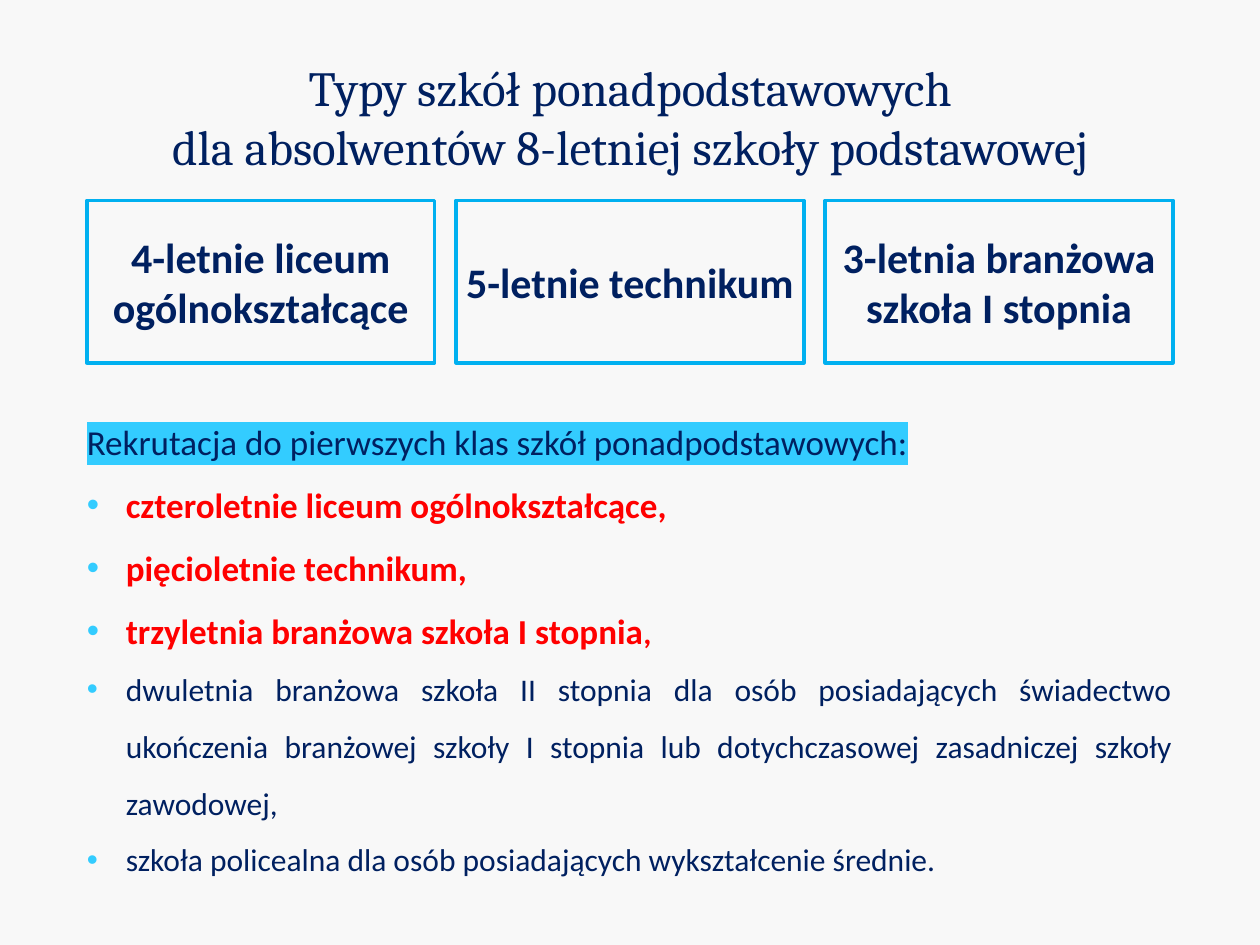
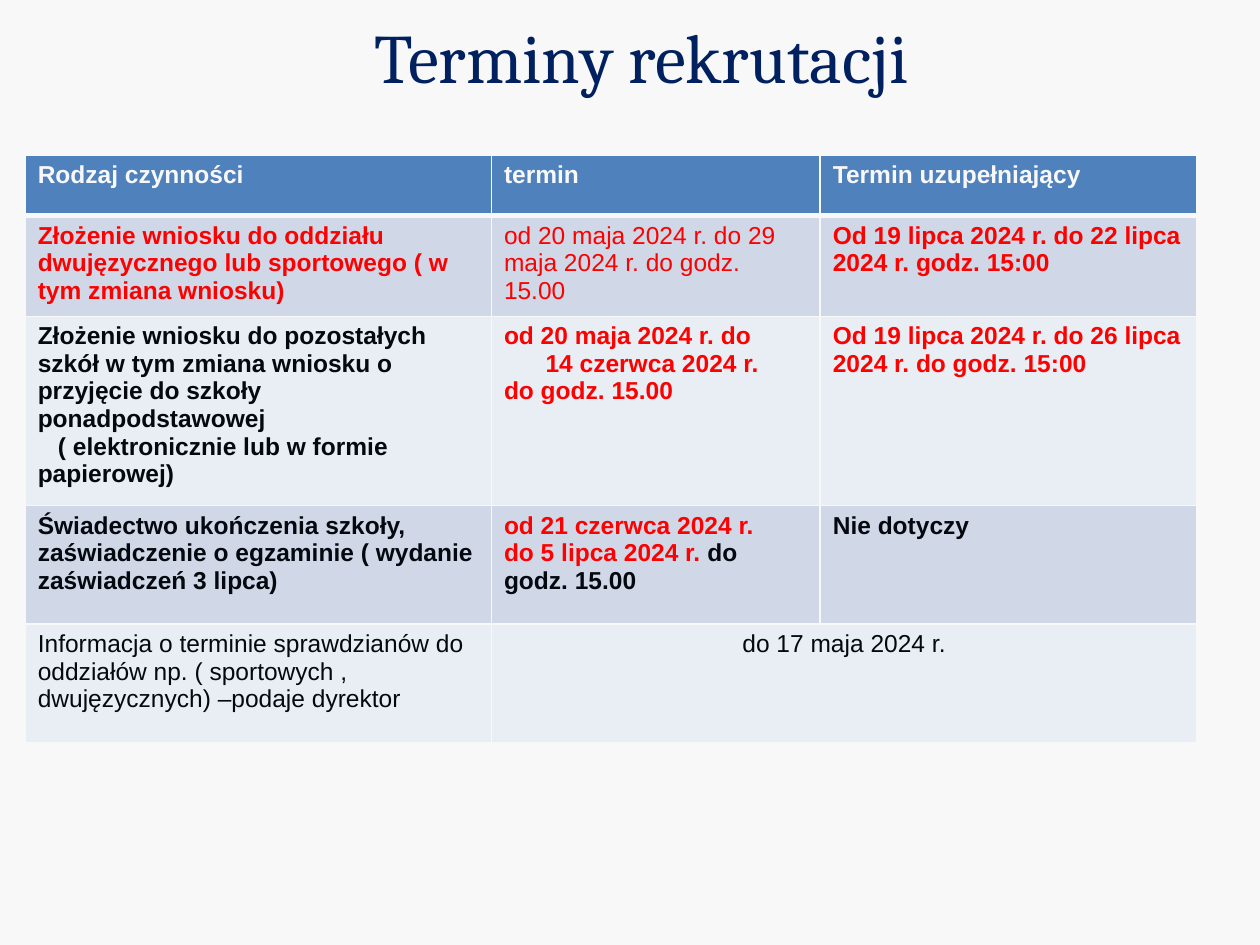
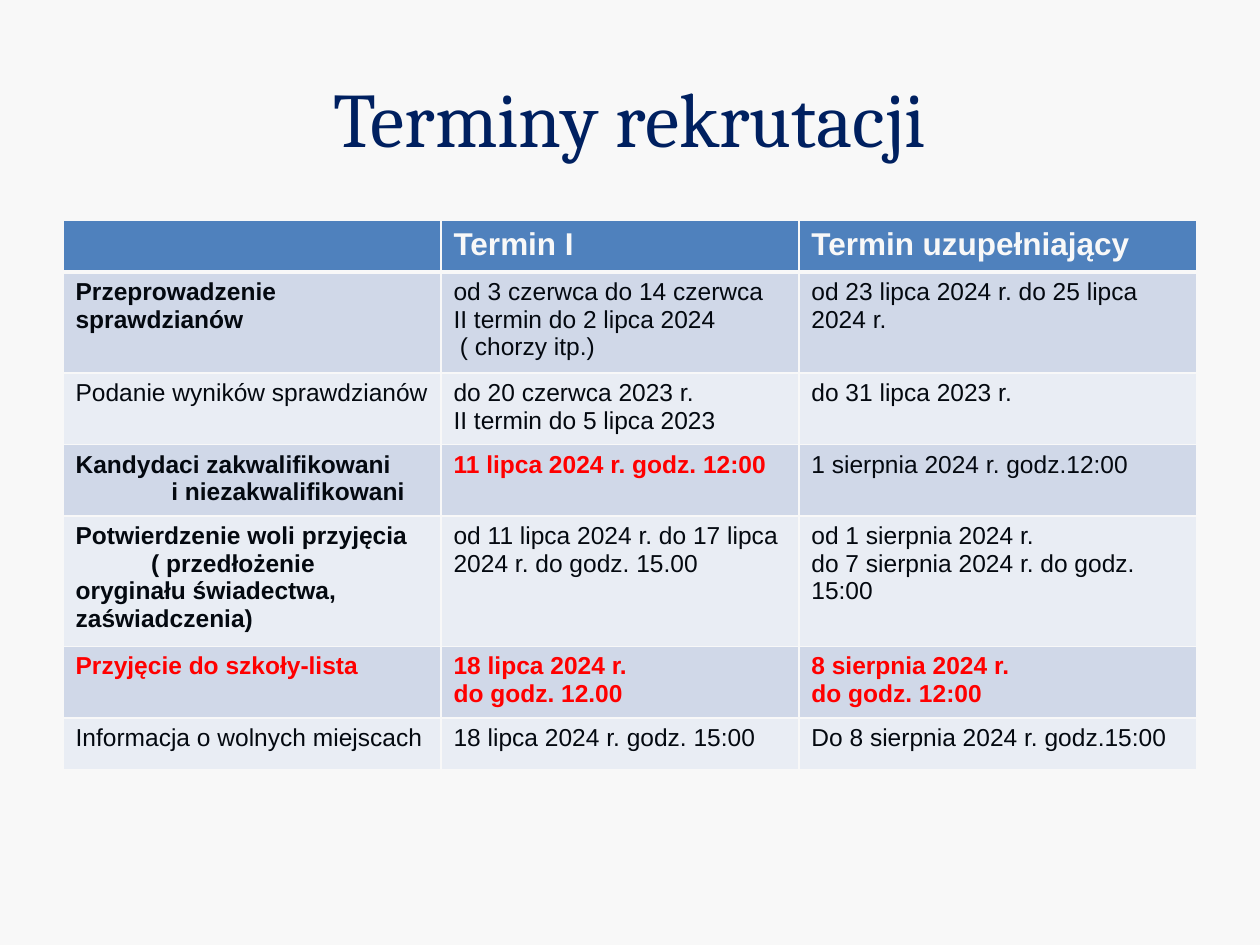
from lxml import etree
from pptx import Presentation
from pptx.dml.color import RGBColor
from pptx.enum.shapes import MSO_SHAPE
from pptx.enum.text import MSO_ANCHOR, PP_ALIGN
from pptx.oxml import parse_xml
from pptx.oxml.ns import nsdecls, qn
from pptx.util import Inches, Pt

RECT = MSO_SHAPE.RECTANGLE
MIDDLE = MSO_ANCHOR.MIDDLE
CENTER, JUSTIFY = PP_ALIGN.CENTER, PP_ALIGN.JUSTIFY

COLORS = {
    "bg": "F8F8F8", "navy": "002060", "frame": "00B0F0", "accent": "33CCFF",
    "red": "FF0000", "dark": "040910", "head": "4F81BD",
    "band_odd": "D0D8E8", "band_even": "E9EDF4",
}
RGB = {name: RGBColor.from_string(value) for name, value in COLORS.items()}

# First-line indents of the set-in lines in the tables
INDENTS = {
    "( elektronicznie lub w formie papierowej)": 0.16,
    "14 czerwca 2024 r.": 0.33,
    "( chorzy itp.)": 0.05,
    "i niezakwalifikowani": 0.76,
    "( przedłożenie\voryginału świadectwa, zaświadczenia)": 0.6,
}


def style(p, size, font, color, bold=False):
    for r in p.runs:
        r.font.size, r.font.name, r.font.bold = Pt(size), font, bold
        r.font.color.rgb = RGB[color]


def add_table(s, left, top, widths, heights, rows, head_size):
    """Cells are (text, flags): b is bold, r is red, c is centred."""
    table = s.shapes.add_table(len(rows), len(widths), Inches(left), Inches(top),
                               Inches(sum(widths)), Inches(sum(heights))).table
    for column, width in zip(table.columns, widths):
        column.width = Inches(width)
    for row, height in zip(table.rows, heights):
        row.height = Inches(height)
    for i, row in enumerate(rows):
        for j, (text, flags) in enumerate(row):
            cell = table.cell(i, j)
            # Cell borders, thick under the header
            tcPr = cell._tc.get_or_add_tcPr()
            for side in "LRTB":
                thick = (i, side) in ((0, "B"), (1, "T"))
                ln = etree.SubElement(tcPr, qn(f"a:ln{side}"), w=str(Pt(3 if thick else 1)))
                fill = etree.SubElement(ln, qn("a:solidFill"))
                etree.SubElement(fill, qn("a:srgbClr"), val=COLORS["bg"])
            cell.fill.solid()
            band = "head" if i == 0 else "band_odd" if i % 2 else "band_even"
            cell.fill.fore_color.rgb = RGB[band]
            # Cell text
            for n, line in enumerate(text.split("\n")):
                tf = cell.text_frame
                p = tf.add_paragraph() if n else tf.paragraphs[0]
                p.text = line
                if line in INDENTS:
                    p._p.get_or_add_pPr().set("indent", str(Inches(INDENTS[line])))
                if "c" in flags:
                    p.alignment = CENTER
                color = "bg" if i == 0 else "red" if "r" in flags else "dark"
                style(p, head_size if i == 0 else 14, "Arial", color, "b" in flags)
    return table


prs = Presentation()
prs.slide_width, prs.slide_height = Inches(10), Inches(7.5)

# Backgrounds and titles
titles = [
    ("Typy szkół ponadpodstawowych\vdla absolwentów 8-letniej szkoły podstawowej",
     28, (0.5, 0.3, 9, 1.25)),
    ("Terminy rekrutacji", 39.6, (0.59, 0.05, 9, 0.79)),
    ("Terminy rekrutacji", 44, (0.5, 0.3, 9, 1.25)),
]
for title, size, box in titles:
    s = prs.slides.add_slide(prs.slide_layouts[6])
    s.background.fill.solid()
    s.background.fill.fore_color.rgb = RGB["bg"]
    tf = s.shapes.add_textbox(*map(Inches, box)).text_frame
    tf.word_wrap, tf.vertical_anchor = True, MIDDLE
    p = tf.paragraphs[0]
    p.text, p.alignment = title, CENTER
    style(p, size, "Cambria", "navy")
types_slide, dates_slide, results_slide = prs.slides

# Slide 1: school types
schools = ["4-letnie liceum ogólnokształcące", "5-letnie technikum",
           "3-letnia branżowa szkoła I stopnia"]
for i, school in enumerate(schools):
    sp = types_slide.shapes.add_shape(RECT, Inches(0.69 + 2.93 * i), Inches(1.59),
                                      Inches(2.76), Inches(1.29))
    sp.shadow.inherit = False
    sp.fill.background()
    sp.line.color.rgb, sp.line.width = RGB["frame"], Pt(2)
    tf = sp.text_frame
    tf.word_wrap, tf.vertical_anchor = True, MIDDLE
    tf.margin_left = tf.margin_right = tf.margin_top = tf.margin_bottom = 0
    p = tf.paragraphs[0]
    p.text, p.alignment = school, CENTER
    style(p, 24, "Calibri", "navy", True)

# Slide 1: recruitment list
items = [
    ("Rekrutacja do pierwszych klas szkół ponadpodstawowych:", 20, "navy", False),
    ("czteroletnie liceum ogólnokształcące,", 20, "red", True),
    ("pięcioletnie technikum,", 20, "red", True),
    ("trzyletnia branżowa szkoła I stopnia", 20, "red", True),
    ("dwuletnia branżowa szkoła II stopnia dla osób posiadających świadectwo ukończenia "
     "branżowej szkoły I stopnia lub dotychczasowej zasadniczej szkoły zawodowej,",
     18, "navy", False),
    ("szkoła policealna dla osób posiadających wykształcenie średnie.", 18, "navy", False),
]
tf = types_slide.shapes.add_textbox(Inches(0.59), Inches(3.12), Inches(8.81),
                                    Inches(3.94)).text_frame
tf.word_wrap = True
for i, (text, size, color, bold) in enumerate(items):
    p = tf.add_paragraph() if i else tf.paragraphs[0]
    p.text, p.alignment, p.line_spacing = text, JUSTIFY, 1.5
    if i:
        pPr = p._p.get_or_add_pPr()
        pPr.set("marL", str(Inches(0.31)))
        pPr.set("indent", str(-Inches(0.31)))
        buClr = etree.SubElement(pPr, qn("a:buClr"))
        etree.SubElement(buClr, qn("a:srgbClr"), val=COLORS["accent"])
        etree.SubElement(pPr, qn("a:buFont"), typeface="Arial")
        etree.SubElement(pPr, qn("a:buChar"), char="•")
    style(p, size, "Calibri", color, bold)

# Smaller comma after the third school, highlight on the heading
p = tf.paragraphs[3]
r = p.add_run()
r.text = ","
style(p, 20, "Calibri", "red", True)
r.font.size = Pt(18)
rPr = tf.paragraphs[0].runs[0]._r.get_or_add_rPr()
rPr.find(qn("a:solidFill")).addnext(parse_xml(
    f'<a:highlight {nsdecls("a")}><a:srgbClr val="{COLORS["accent"]}"/></a:highlight>'))

# Slide 2: application dates
date_rows = [
    [("Rodzaj czynności", "b"), ("termin", "b"), ("Termin uzupełniający", "b")],
    [("Złożenie wniosku do oddziału dwujęzycznego lub sportowego ( w tym zmiana wniosku)", "br"),
     ("od 20 maja 2024 r. do 29 maja 2024 r. do godz.\v15.00", "r"),
     ("Od 19 lipca 2024 r. do 22 lipca 2024 r. godz. 15:00", "br")],
    [("Złożenie wniosku do pozostałych szkół w tym zmiana wniosku o przyjęcie do szkoły "
      "ponadpodstawowej\n( elektronicznie lub w formie papierowej)", "b"),
     ("od 20 maja 2024 r. do\n14 czerwca 2024 r.\ndo godz. 15.00", "br"),
     ("Od 19 lipca 2024 r. do 26 lipca 2024 r. do godz. 15:00", "br")],
    [("Świadectwo ukończenia szkoły, zaświadczenie o egzaminie ( wydanie zaświadczeń 3 lipca)",
      "b"),
     ("od 21 czerwca 2024 r.\ndo 5 lipca 2024 r. ", "br"), ("Nie dotyczy", "b")],
    [("Informacja o terminie sprawdzianów do oddziałów np. ( sportowych , dwujęzycznych) "
      "–podaje dyrektor", ""),
     ("do 17 maja 2024 r.", "c"), ("", "")],
]
table = add_table(dates_slide, 0.2, 1.23, [3.7, 2.61, 2.99],
                  [0.48, 0.75, 1.41, 0.94, 0.94], date_rows, 14)
table.cell(4, 1).merge(table.cell(4, 2))

# Dark ending of the certificate deadline
p = table.cell(3, 1).text_frame.paragraphs[1]
r = p.add_run()
r.text = "do godz. 15.00"
style(p, 14, "Arial", "red", True)
r.font.color.rgb = RGB["dark"]

# Slide 3: tests and results
result_rows = [
    [("", "b"), ("Termin I", "b"), ("Termin uzupełniający", "b")],
    [("Przeprowadzenie sprawdzianów", "b"),
     ("od 3 czerwca do 14 czerwca\nII termin do 2 lipca 2024\n( chorzy itp.)", ""),
     ("od 23 lipca 2024 r. do 25 lipca 2024 r.", "")],
    [("Podanie wyników sprawdzianów", ""),
     ("do 20 czerwca 2023 r.\nII termin do 5 lipca 2023", ""), ("do 31 lipca 2023 r.", "")],
    [("Kandydaci zakwalifikowani\ni niezakwalifikowani", "b"),
     ("11 lipca 2024 r. godz. 12:00", "br"), ("1 sierpnia 2024 r. godz.12:00", "")],
    [("Potwierdzenie woli przyjęcia\n"
      "( przedłożenie\voryginału świadectwa, zaświadczenia)", "b"),
     ("od 11 lipca 2024 r. do 17 lipca 2024 r. do godz. 15.00", ""),
     ("od 1 sierpnia 2024 r.\ndo 7 sierpnia 2024 r. do godz. 15:00", "")],
    [("Przyjęcie do szkoły-lista", "br"), ("18 lipca 2024 r.\ndo godz. 12.00", "br"),
     ("8 sierpnia 2024 r.\ndo godz. 12:00", "br")],
    [("Informacja o wolnych miejscach", ""), ("18 lipca 2024 r. godz. 15:00", ""),
     ("Do 8 sierpnia 2024 r. godz.15:00", "")],
]
add_table(results_slide, 0.5, 1.75, [3, 2.84, 3.16], [0.41] * 7, result_rows, 18)

prs.save("out.pptx")
